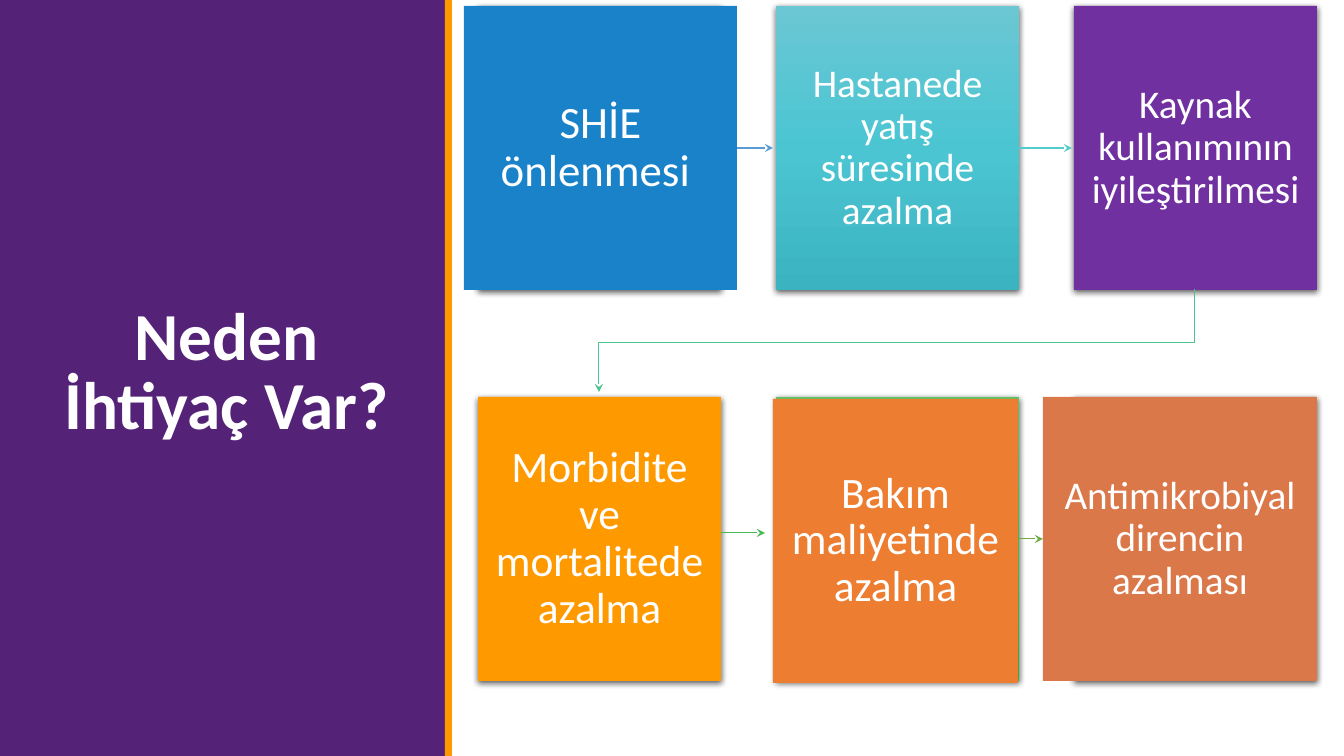
from copy import deepcopy

from lxml import etree
from pptx import Presentation
from pptx.dml.color import RGBColor
from pptx.enum.shapes import MSO_CONNECTOR, MSO_SHAPE
from pptx.enum.text import MSO_ANCHOR, MSO_AUTO_SIZE, PP_ALIGN
from pptx.oxml.ns import qn
from pptx.util import Pt

RECT, STRAIGHT = MSO_SHAPE.RECTANGLE, MSO_CONNECTOR.STRAIGHT
CENTER, MIDDLE, BOTTOM = PP_ALIGN.CENTER, MSO_ANCHOR.MIDDLE, MSO_ANCHOR.BOTTOM
PX = 914400 / 100.8
FONT = "Calibri"
COLORS = {
    "purple": "542378", "orange": "FF9900", "white": "FFFFFF", "black": "000000",
    "blue": "1982C9", "violet": "7030A0", "rust": "ED7D31", "clay": "DB784A",
    "arrow1": "599BD5", "arrow2": "52CBCC", "arrow3": "4CC38C",
    "arrow4": "46BA4E", "arrow5": "6FAB46",
}


def add_rect(x, y, w, h, color=None):
    rect = s.shapes.add_shape(RECT, *(round(v * PX) for v in (x, y, w, h)))
    rect.shadow.inherit = False
    rect.line.fill.background()
    if color:
        rect.fill.solid()
        rect.fill.fore_color.rgb = RGBColor.from_string(COLORS[color])
    return rect


def style_arrow(arrow, color):
    arrow.line.color.rgb = RGBColor.from_string(COLORS[color])
    arrow.line.width = Pt(0.75)
    etree.SubElement(arrow.get_or_add_ln(), qn("a:tailEnd"), type="stealth")
    etree.SubElement(arrow.element.spPr, qn("a:effectLst"))


prs = Presentation()
prs.slide_width, prs.slide_height = round(1344 * PX), round(756 * PX)
s = prs.slides.add_slide(prs.slide_layouts[5])

# Side panel and title
title = s.shapes.title
for x, w, color in ((0, 446, "purple"), (445, 7, "orange")):
    title.element.addprevious(add_rect(x, 0, w, 756, color).element)
title.left, title.top, title.width, title.height = (
    round(v * PX) for v in (50, 273, 353, 175))
tf = title.text_frame
tf.text = "Neden İhtiyaç Var?"
tf.word_wrap, tf.auto_size, tf.vertical_anchor = True, MSO_AUTO_SIZE.NONE, BOTTOM
p = tf.paragraphs[0]
p.alignment, p.line_spacing = CENTER, 0.85
p.font.name, p.font.size, p.font.bold = FONT, Pt(48), True
p.font.color.rgb = RGBColor.from_string(COLORS["white"])

# Cards: a shadowed gradient base, most with a plain face on top
LEFT, TOP, CARD_W, CARD_H, STEP_X, STEP_Y = 478, 6, 243, 284, 298, 391
CARDS = [  # text, size, base gradient, face colour, face dx, dy, width
    ("SHİE\nönlenmesi ", 32, ("6EA5DA", "529BDA", "4188C8"), "blue", -14, 0, 273),
    ("Hastanede yatış süresinde azalma", 28,
     ("6AC7D3", "4CC5D3", "3BB3C1"), None, 0, 0, CARD_W),
    ("Kaynak kullanımının iyileştirilmesi ", 28,
     ("66CDAE", "47CCA7", "37BB96"), "violet", 0, 0, CARD_W),
    ("Morbidite ve mortalitede azalma", 31,
     ("62C683", "43C470", "33B561"), "orange", 0, 0, CARD_W),
    ("Bakım maliyetinde azalma", 31,
     ("61C05F", "43BD3E", "36AC32"), "rust", -3, 2, 245),
    ("Antimikrobiyal direncin azalması", 28,
     ("7EB55F", "6EB03F", "5F9F34"), "clay", -31, 0, 274),
]
bases, faces = [], []
for i, (text, size, gradient, color, dx, dy, face_w) in enumerate(CARDS):
    x, y = LEFT + i % 3 * STEP_X, TOP + i // 3 * STEP_Y
    base = add_rect(x, y, CARD_W, CARD_H)
    base.fill.gradient()
    base.fill.gradient_angle = 270
    stops = base.element.spPr.find(".//" + qn("a:gsLst"))
    stops.insert(1, deepcopy(stops[0]))
    for stop, position, rgb in zip(base.fill.gradient_stops, (0, 0.5, 1), gradient):
        stop.position = position
        stop.color.rgb = RGBColor.from_string(rgb)
    shadow = etree.SubElement(
        base.element.spPr.find(qn("a:effectLst")), qn("a:outerShdw"),
        blurRad="57150", dist="19050", dir="5400000", algn="ctr", rotWithShape="0")
    shade = etree.SubElement(shadow, qn("a:srgbClr"), val=COLORS["black"])
    etree.SubElement(shade, qn("a:alpha"), val="63000")

    face = add_rect(x + dx, y + dy, face_w, CARD_H, color) if color else base
    tf = face.text_frame
    tf.text = text
    tf.word_wrap, tf.vertical_anchor = True, MIDDLE
    tf.margin_left = tf.margin_right = round(16 * PX)
    tf.margin_top = tf.margin_bottom = round(17 * PX)
    for p in tf.paragraphs:
        p.alignment, p.line_spacing = CENTER, 0.9
        p.font.name, p.font.size = FONT, Pt(size)
        p.font.color.rgb = RGBColor.from_string(COLORS["white"])
    bases.append(base)
    faces.append(face)

# Arrows between the cards
ARROWS = [  # x1, x2, y, colour, start card, end card
    (737, 773, 148, "arrow1", faces[0], None),
    (1019, 1072, 148, "arrow2", bases[1], None),
    (721, 765, 533, "arrow4", None, None),
    (1019, 1043, 539, "arrow5", bases[4], faces[5]),
]
for x1, x2, y, color, start, end in ARROWS:
    arrow = s.shapes.add_connector(
        STRAIGHT, *(round(v * PX) for v in (x1, y, x2, y)))
    if start:
        arrow.begin_connect(start, 3)
    if end:
        arrow.end_connect(end, 1)
    style_arrow(arrow, color)

builder = s.shapes.build_freeform(1195, 289, scale=PX)
builder.add_line_segments([(1195, 343), (599, 343), (599, 392)], close=False)
row_arrow = builder.convert_to_shape()
row_arrow.fill.background()
style_arrow(row_arrow, "arrow3")

prs.save("out.pptx")
